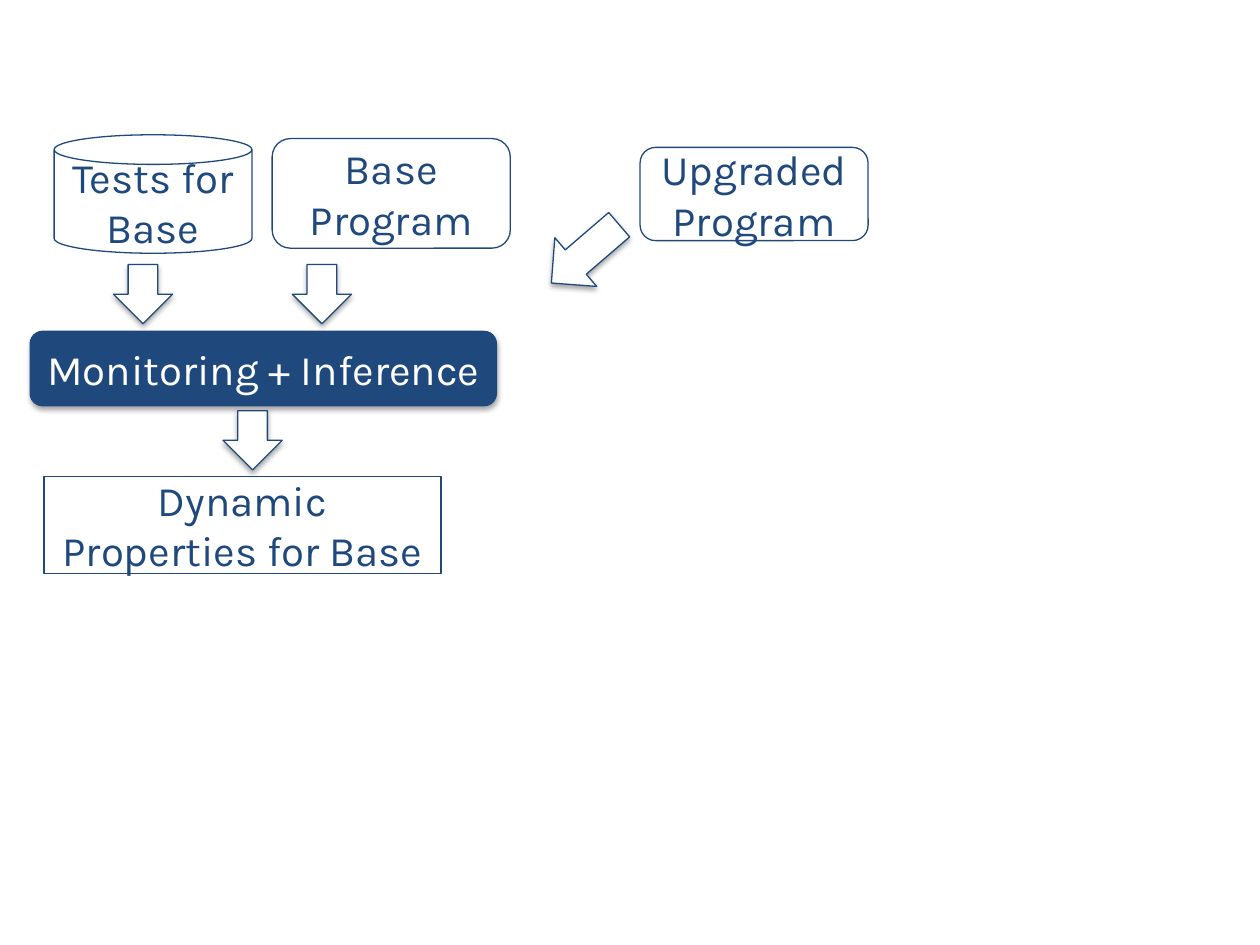
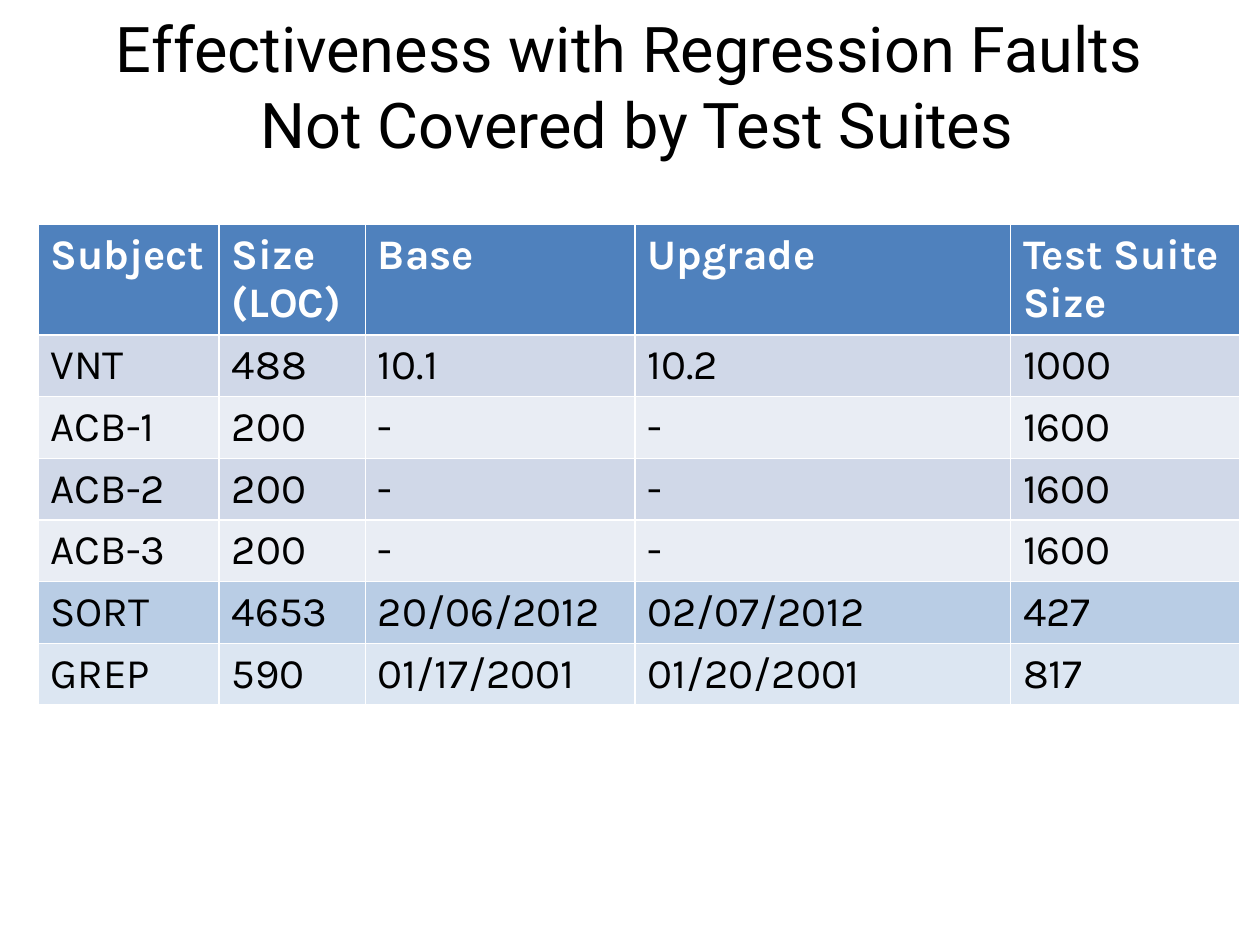
"""Build two slides: a regression-checking workflow and a table of subjects."""
from lxml.etree import SubElement
from pptx import Presentation
from pptx.dml.color import RGBColor
from pptx.enum.shapes import MSO_SHAPE as Shape
from pptx.enum.text import MSO_ANCHOR as Anchor, PP_ALIGN as Align
from pptx.oxml.ns import qn
from pptx.util import Inches, Pt

WHITE, BLACK, NAVY = "FFFFFF", "000000", "1F497D"
HEADER = "4F81BD"
BODY_FONT, TITLE_FONT = "Karla", "Roboto"


def color(hex_string):
    return RGBColor.from_string(hex_string)


def write(para, text, ink, size=24, face=BODY_FONT, bold=False):
    span = para.add_run()
    span.text = text
    span.font.name = face
    span.font.size = Pt(size)
    span.font.bold = bold
    span.font.color.rgb = color(ink)


deck = Presentation()
deck.slide_width, deck.slide_height = Inches(10), Inches(7.5)

workflow = deck.slides.add_slide(deck.slide_layouts[6])

nodes = [
    (Shape.RECTANGLE, (0.35, 3.78, 3.15, 0.77), WHITE, "Dynamic Properties for Base"),
    (Shape.ROUNDED_RECTANGLE, (2.16, 1.1, 1.89, 0.87), WHITE, "Base Program"),
    (Shape.ROUNDED_RECTANGLE, (5.08, 1.17, 1.81, 0.74), WHITE, "Upgraded Program"),
    (Shape.CAN, (0.43, 1.07, 1.57, 0.94), None, "Tests for Base"),
    (Shape.ROUNDED_RECTANGLE, (0.24, 2.63, 3.7, 0.59), NAVY, "Monitoring + Inference"),
]
arrows = [
    (Shape.DOWN_ARROW, (left, top, 0.47, 0.47), WHITE, "")
    for left, top in [(1.77, 3.26), (0.9, 2.1), (2.32, 2.1)]
]
slanted_arrow = (Shape.DOWN_ARROW, (4.39, 1.66, 0.51, 0.71), WHITE, "")

for kind, place, fill, text in [*nodes, *arrows, slanted_arrow]:
    box = workflow.shapes.add_shape(kind, *map(Inches, place))
    box.shadow.inherit = False
    if fill:
        box.fill.solid()
        box.fill.fore_color.rgb = color(fill)
    else:
        box.fill.background()
    box.line.color.rgb = color(NAVY)
    box.line.width = Pt(0.75)
    if kind == Shape.DOWN_ARROW or fill == NAVY:
        effects = box.element.spPr.find(qn("a:effectLst"))
        shadow = SubElement(effects, qn("a:outerShdw"), blurRad=str(Pt(3.1)),
                            dist=str(Pt(1.8)), dir="5400000", rotWithShape="0")
        tint = SubElement(shadow, qn("a:srgbClr"), val=BLACK)
        SubElement(tint, qn("a:alpha"), val="35000")
    if text:
        frame = box.text_frame
        frame.word_wrap = True
        frame.vertical_anchor = Anchor.MIDDLE
        frame.paragraphs[0].alignment = Align.CENTER
        write(frame.paragraphs[0], text, WHITE if fill == NAVY else NAVY)
box.rotation = 49.3

results = deck.slides.add_slide(deck.slide_layouts[5])

title = results.shapes.title
title.left, title.top = Inches(-0.62), Inches(0.05)
title.width, title.height = Inches(11.35), Inches(1.25)
frame = title.text_frame
frame.vertical_anchor = Anchor.MIDDLE
title_lines = ["Effectiveness with Regression Faults ", "Not Covered by Test Suites"]
for index, line in enumerate(title_lines):
    para = frame.add_paragraph() if index else frame.paragraphs[0]
    para.alignment = Align.CENTER
    write(para, line, BLACK, 36, TITLE_FONT)

subjects = [
    (HEADER, "Subject", "Size (LOC)", "Base", "Upgrade", "Test Suite Size"),
    ("D0D8E8", "VNT", "488", "10.1", "10.2", "1000"),
    ("E9EDF4", "ACB-1", "200", "-", "-", "1600"),
    ("D0D8E8", "ACB-2", "200", "-", "-", "1600"),
    ("E9EDF4", "ACB-3", "200", "-", "-", "1600"),
    ("B9CDE5", "SORT", "4653", "20/06/2012", "02/07/2012", "427"),
    ("DCE6F2", "GREP", "590", "01/17/2001", "01/20/2001", "817"),
]
widths = [1.44, 1.16, 2.14, 2.98, 1.82]
table = results.shapes.add_table(
    len(subjects), len(widths), Inches(0.3), Inches(1.78), Inches(sum(widths)), Inches(3.81)
).table
for column, width in zip(table.columns, widths):
    column.width = Inches(width)
for row, (fill, *values) in zip(table.rows, subjects):
    is_header = fill == HEADER
    row.height = Inches(0.87 if is_header else 0.49)
    for cell, value in zip(row.cells, values):
        cell.fill.solid()
        cell.fill.fore_color.rgb = color(fill)
        write(cell.text_frame.paragraphs[0], value, WHITE if is_header else BLACK, bold=is_header)

deck.save("out.pptx")
